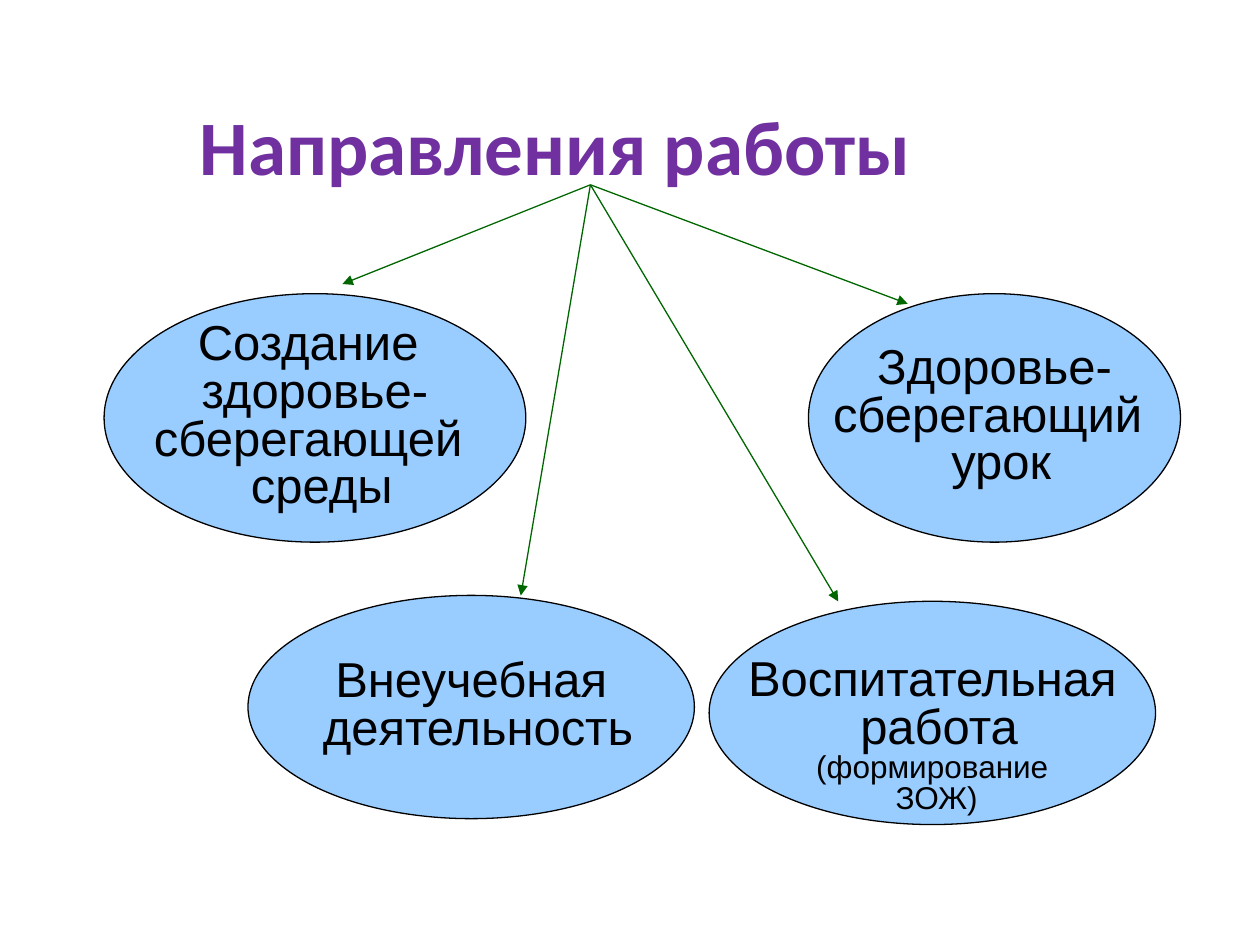
from pptx import Presentation
from pptx.dml.color import RGBColor
from pptx.enum.shapes import MSO_CONNECTOR, MSO_SHAPE
from pptx.enum.text import MSO_ANCHOR, PP_ALIGN
from pptx.oxml.ns import qn
from pptx.util import Pt
from lxml import etree

CENTER = PP_ALIGN.CENTER
MIDDLE = MSO_ANCHOR.MIDDLE
ELLIPSE = MSO_SHAPE.OVAL
STRAIGHT = MSO_CONNECTOR.STRAIGHT


def color(value):
    return RGBColor.from_string(value)


def write(paragraph, text, size=28, font="Arial", fill="000000", bold=False, spacing=0.81):
    paragraph.alignment = CENTER
    paragraph.line_spacing = spacing
    paragraph.space_before = Pt(0)
    run = paragraph.add_run()
    run.text = text
    run.font.size = Pt(size)
    run.font.name = font
    run.font.bold = bold
    run.font.color.rgb = color(fill)


deck = Presentation()
deck.slide_width, deck.slide_height = Pt(720), Pt(540)
slide = deck.slides.add_slide(deck.slide_layouts[5])

heading = slide.shapes.title
heading.left, heading.top, heading.width, heading.height = Pt(99.4), Pt(37.4), Pt(436.3), Pt(90)
heading.text_frame.vertical_anchor = MIDDLE
write(heading.text_frame.paragraphs[0], "Направления работы",
      size=44, font="Calibri", fill="7030A0", bold=True, spacing=1.01)

directions = [
    ((59.5, 167.8, 241, 142), 3.6,
     [("Создание ", 28), ("здоровье-", 28), ("сберегающей ", 28), (" среды", 28)]),
    ((462, 167.8, 212.6, 142), 3.6,
     [("Здоровье-", 28), ("сберегающий ", 28), (" урок", 28)]),
    ((141.7, 340.2, 255.1, 127.6), 3.6,
     [("Внеучебная", 28), (" деятельность", 28)]),
    ((405.2, 343.6, 255.1, 127.6), 31,
     [("Воспитательная", 28), (" работа", 28), ("(формирование", 18), (" ЗОЖ)", 18)]),
]
for bounds, top_inset, lines in directions:
    direction = slide.shapes.add_shape(ELLIPSE, *map(Pt, bounds))
    direction.shadow.inherit = False
    direction.fill.solid()
    direction.fill.fore_color.rgb = color("99CCFF")
    direction.line.color.rgb = color("000000")
    direction.line.width = Pt(0.75)
    frame = direction.text_frame
    frame.word_wrap = False
    frame.vertical_anchor = MIDDLE
    frame.margin_top = Pt(top_inset)
    for index, (text, size) in enumerate(lines):
        paragraph = frame.add_paragraph() if index else frame.paragraphs[0]
        write(paragraph, text, size=size)

origin = (337.4, 105.6)
for target in [(195.7, 162.3), (518.7, 173.6), (297.6, 340.3), (479, 343.7)]:
    arrow = slide.shapes.add_connector(STRAIGHT, *map(Pt, origin + target))
    arrow.line.color.rgb = color("006600")
    arrow.line.width = Pt(0.75)
    etree.SubElement(arrow.line._get_or_add_ln(), qn("a:tailEnd"), type="triangle")
    etree.SubElement(arrow._element.spPr, qn("a:effectLst"))

deck.save("out.pptx")
